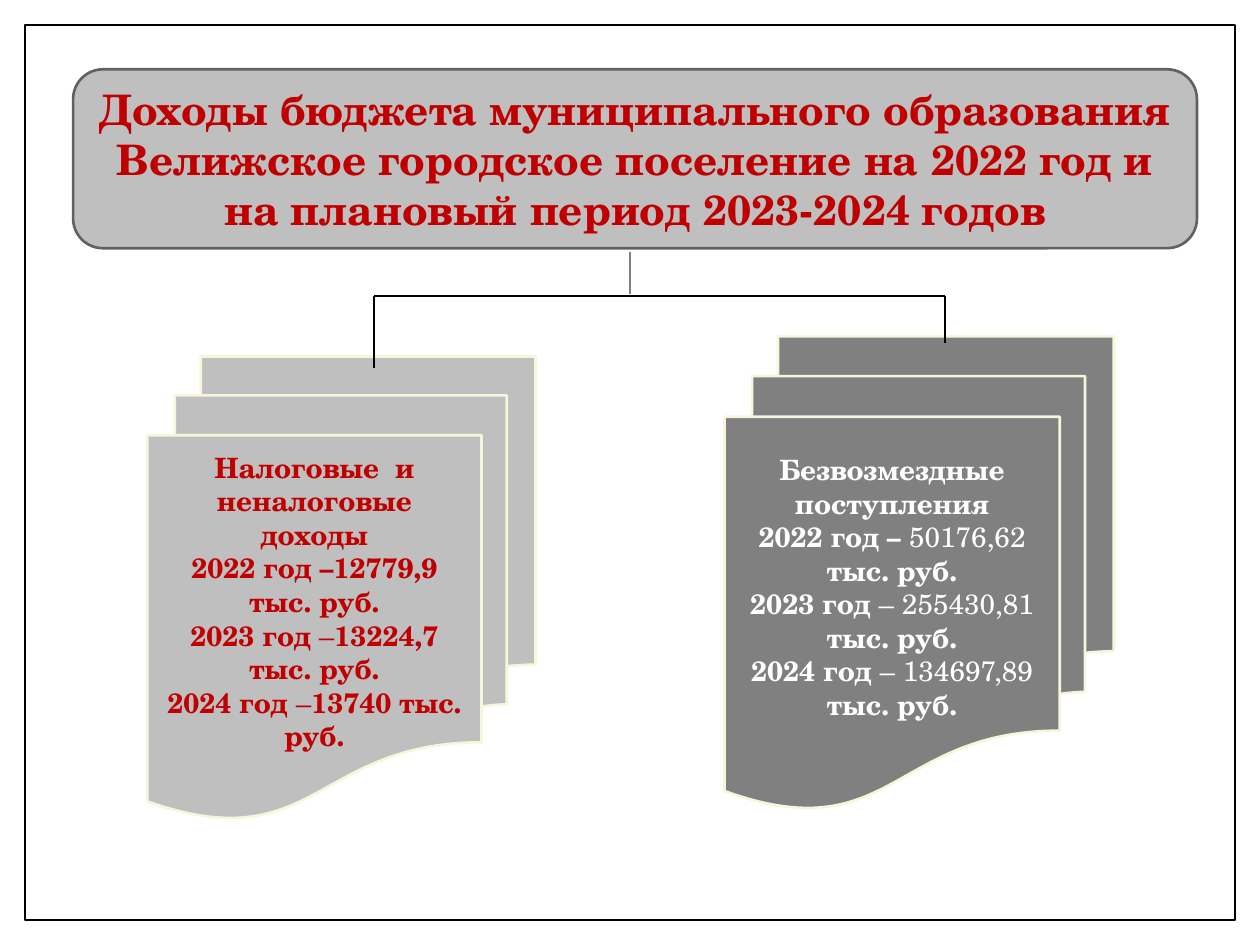
from collections import namedtuple

from lxml.etree import SubElement
from pptx import Presentation
from pptx.dml.color import RGBColor
from pptx.enum.shapes import MSO_CONNECTOR as Connector, MSO_SHAPE as Shape
from pptx.enum.text import MSO_ANCHOR as Anchor, PP_ALIGN as Align
from pptx.oxml.ns import qn
from pptx.util import Inches, Pt

BLACK = RGBColor(0x00, 0x00, 0x00)
WHITE = RGBColor(0xFF, 0xFF, 0xFF)
RED = RGBColor(0xC0, 0x00, 0x00)
SILVER = RGBColor(0xBF, 0xBF, 0xBF)
GRAY = RGBColor(0x80, 0x80, 0x80)
DARK_GRAY = RGBColor(0x61, 0x61, 0x62)
CREAM = RGBColor(0xF7, 0xF6, 0xDA)
FONT = "TeX Gyre Schola"

Box = namedtuple("Box", "left top width height")

TITLE = [[("Доходы бюджета муниципального образования Велижское городское "
           "поселение на 2022 год и на плановый период 2023-2024 годов", True)]]
TAX_INCOME = [
    [("Налоговые  и неналоговые доходы", True)],
    [("2022 год –12779,9", True)],
    [("тыс. руб.", True)],
    [("2023 год ", True), ("–", False), ("13224,7 тыс. руб.", True)],
    [("2024 год ", True), ("–", False), ("13740 тыс. руб.", True)],
]
GRANTS = [
    [("Безвозмездные поступления", True)],
    [("2022 год – ", True), ("50176,62 ", False), ("тыс. руб.", True)],
    [("2023 год ", True), ("– 255430,81 ", False), ("тыс. руб.", True)],
    [("2024 год ", True), ("– 134697,89 ", False), ("тыс. руб.", True)],
]


def add_panel(page, kind, box, fill, line, weight):
    """Add a filled, outlined shape without a shadow."""
    panel = page.shapes.add_shape(kind, *map(Inches, box))
    panel.shadow.inherit = False
    panel.fill.solid()
    panel.fill.fore_color.rgb = fill
    panel.line.color.rgb = line
    panel.line.width = Pt(weight)
    return panel


def write_text(panel, paragraphs, size, color):
    """Write centred paragraphs made of (text, bold) spans."""
    frame = panel.text_frame
    frame.word_wrap = True
    frame.vertical_anchor = Anchor.MIDDLE
    for index, spans in enumerate(paragraphs):
        para = frame.add_paragraph() if index else frame.paragraphs[0]
        para.alignment = Align.CENTER
        for text, bold in spans:
            span = para.add_run()
            span.text = text
            span.font.name = FONT
            span.font.size = Pt(size)
            span.font.bold = bold
            span.font.color.rgb = color


def add_title(page, box):
    """Add the rounded title banner."""
    banner = add_panel(page, Shape.ROUNDED_RECTANGLE, box, SILVER, DARK_GRAY, 1.5)
    write_text(banner, TITLE, 24, RED)


def add_income_stack(page, box, paragraphs, fill, color):
    """Add a stack of sheets describing one kind of income."""
    stack = add_panel(page, Shape.FLOWCHART_MULTIDOCUMENT, box, fill, CREAM, 1.5)
    write_text(stack, paragraphs, 16, color)
    stack.text_frame.margin_bottom = Inches(0.32)


def add_line(page, start, end, color):
    """Add a thin straight line between two points."""
    line = page.shapes.add_connector(
        Connector.STRAIGHT, *map(Inches, (*start, *end)))
    line.line.color.rgb = color
    line.line.width = Pt(0.79)
    SubElement(line._element.spPr, qn("a:effectLst"))


def add_branches(page, box, trunk, drops):
    """Add the trunk, crossbar and two drops that join title and stacks."""
    right = box.left + box.width
    bar = box.top + 0.35
    add_line(page, (box.left, bar), (right, bar), BLACK)
    for x, drop in zip((box.left, right), drops):
        add_line(page, (x, bar), (x, bar + drop), BLACK)
    add_line(page, (trunk, box.top), (trunk, bar - 0.02), GRAY)


def build_page(page, box):
    """Place the frame, title, branches and income stacks."""
    add_panel(page, Shape.RECTANGLE, box, WHITE, BLACK, 1)
    left, top = box.left, box.top
    add_income_stack(page, Box(left + 5.55, top + 2.47, 3.09, 3.75),
                     GRANTS, GRAY, WHITE)
    add_title(page, Box(left + 0.38, top + 0.35, 8.92, 1.42))
    add_income_stack(page, Box(left + 0.97, top + 2.63, 3.08, 3.67),
                     TAX_INCOME, SILVER, RED)
    add_branches(page, Box(left + 2.77, top + 1.8, 4.53, 0.92),
                 left + box.width / 2, (0.57, 0.37))


def main():
    """Build and save the deck."""
    deck = Presentation()
    deck.slide_width, deck.slide_height = Inches(10), Inches(7.5)
    page = deck.slides.add_slide(deck.slide_layouts[6])
    build_page(page, Box(0.2, 0.2, 9.6, 7.1))
    deck.save("out.pptx")


if __name__ == "__main__":
    main()
